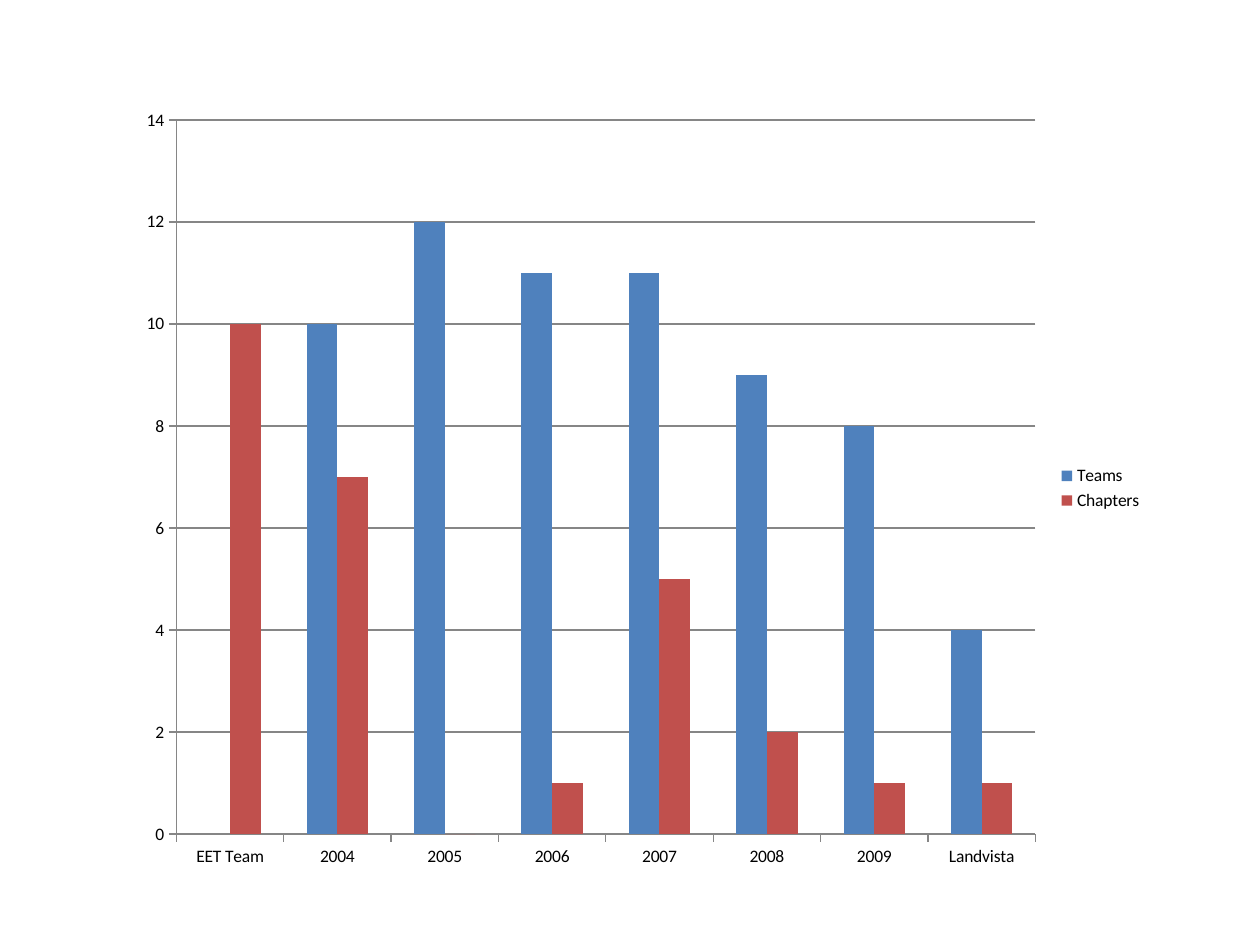
from pptx import Presentation, util as u
from pptx.chart import data
from pptx.dml.color import RGBColor
from pptx.enum import chart as kinds

GROUPS = ["EET Team", "2004", "2005", "2006", "2007", "2008", "2009", "Landvista"]
COUNTS = {
    "Teams": [None, 10, 12, 11, 11, 9, 8, 4],
    "Chapters": [10, 7, 0, 1, 5, 2, 1, 1],
}
THEME = {
    "font": "Calibri",
    "size": 10,
    "text": "000000",
    "line": "868686",
    "Teams": "4F81BD",
    "Chapters": "C0504D",
}
FRAME = (1, 0.75, 8.17, 6.25)


def tint(name):
    return RGBColor.from_string(THEME[name])


def rule(line):
    line.color.rgb = tint("line")
    line.width = u.Pt(0.75)


def style(chart):
    chart.font.name = THEME["font"]
    chart.font.size = u.Pt(THEME["size"])
    chart.font.color.rgb = tint("text")
    chart.has_title = False
    chart.has_legend = True
    chart.legend.position = kinds.XL_LEGEND_POSITION.RIGHT
    chart.legend.include_in_layout = False

    for axis in (chart.category_axis, chart.value_axis):
        axis.major_tick_mark = kinds.XL_TICK_MARK.OUTSIDE
        axis.minor_tick_mark = kinds.XL_TICK_MARK.NONE
        rule(axis.format.line)
    scale = chart.value_axis
    scale.minimum_scale, scale.maximum_scale, scale.major_unit = 0, 14, 2
    scale.has_major_gridlines = True
    rule(scale.major_gridlines.format.line)

    plot = chart.plots[0]
    plot.gap_width = 150
    plot.overlap = 0
    plot.vary_by_categories = False
    for bars in plot.series:
        bars.invert_if_negative = False
        bars.format.fill.solid()
        bars.format.fill.fore_color.rgb = tint(bars.name)


def main():
    deck = Presentation()
    deck.slide_width, deck.slide_height = u.Inches(10), u.Inches(7.5)
    slide = deck.slides.add_slide(deck.slide_layouts[6])
    table = data.CategoryChartData(number_format="General")
    table.categories = GROUPS
    for name, counts in COUNTS.items():
        table.add_series(name, counts)
    frame = slide.shapes.add_chart(
        kinds.XL_CHART_TYPE.COLUMN_CLUSTERED, *map(u.Inches, FRAME), table
    )
    style(frame.chart)
    deck.save("out.pptx")


if __name__ == "__main__":
    main()
